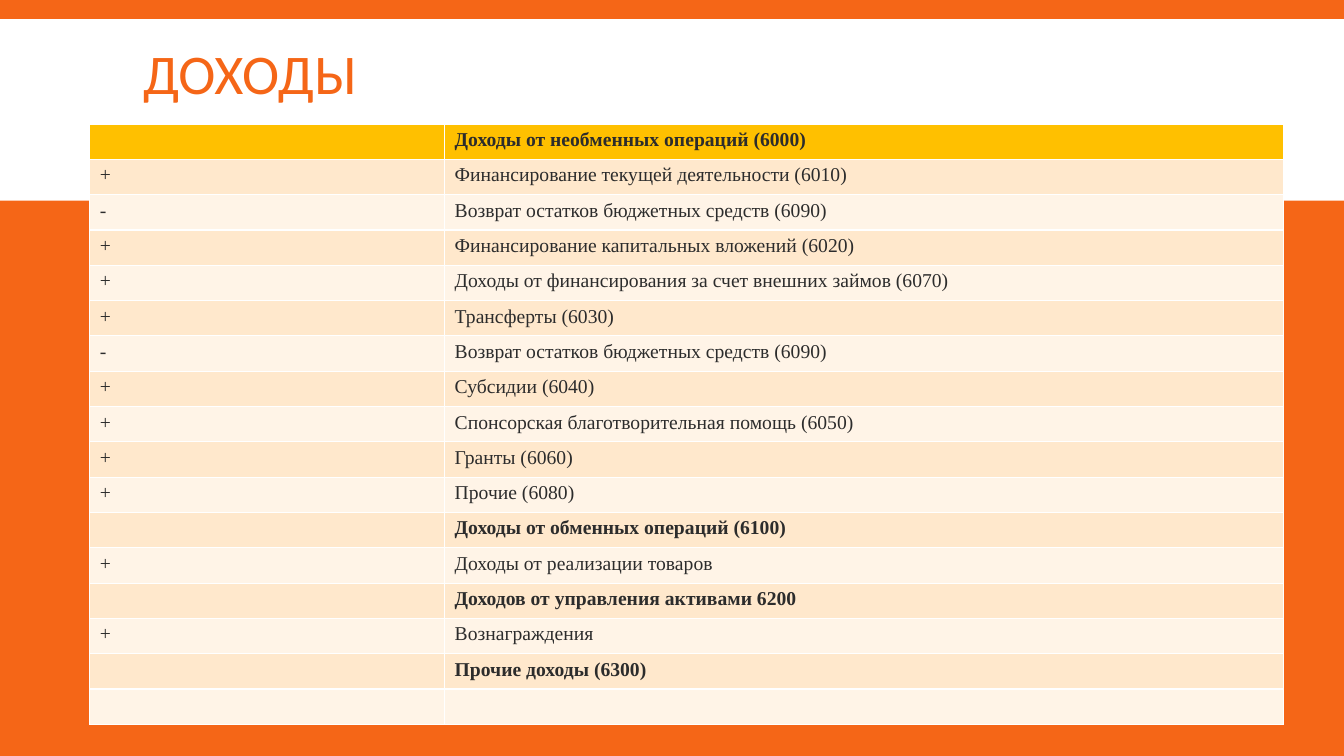
import pptx
import pptx.dml.color
import pptx.enum.shapes
import pptx.enum.text
import pptx.oxml.ns
import pptx.util
from lxml import etree
from pptx.util import Inches

COLORS = {
    "orange": "F56617",
    "white": "FFFFFF",
    "header": "FFC000",
    "dark_band": "FFE8CC",
    "light_band": "FFF4E7",
    "ink": "2C2C2C",
}

INCOME_ROWS = [
    ("", "Доходы от необменных операций (6000)"),
    ("+", "Финансирование текущей деятельности (6010)"),
    ("-", "Возврат остатков бюджетных средств (6090)"),
    ("+", "Финансирование капитальных вложений (6020)"),
    ("+", "Доходы от финансирования за счет внешних займов (6070)"),
    ("+", "Трансферты (6030)"),
    ("-", "Возврат остатков бюджетных средств (6090)"),
    ("+", "Субсидии (6040)"),
    ("+", "Спонсорская благотворительная помощь (6050)"),
    ("+", "Гранты (6060)"),
    ("+", "Прочие (6080)"),
    ("", "Доходы от обменных операций (6100)"),
    ("+", "Доходы от реализации товаров"),
    ("", "Доходов от управления активами 6200"),
    ("+", "Вознаграждения"),
    ("", "Прочие доходы (6300)"),
    ("", ""),
]


def rgb(name):
    """Return the named palette colour."""
    return pptx.dml.color.RGBColor.from_string(COLORS[name])


def paint(fill, color):
    """Give a fill one solid palette colour."""
    fill.solid()
    fill.fore_color.rgb = rgb(color)


def write(frame, text, size=14, font="Times New Roman", color="ink", bold=False, spacing=1.0):
    """Write one left-aligned paragraph, keeping its size even when empty."""
    paragraph = frame.paragraphs[0]
    paragraph.alignment = pptx.enum.text.PP_ALIGN.LEFT
    paragraph.line_spacing = spacing
    if not text:
        end = etree.SubElement(paragraph._p, pptx.oxml.ns.qn("a:endParaRPr"))
        end.set("sz", str(size * 100))
        return
    run = paragraph.add_run()
    run.text = text
    run.font.size = pptx.util.Pt(size)
    run.font.name = font
    run.font.bold = bold
    run.font.color.rgb = rgb(color)


def add_title_band(slide, left, top, width, height):
    """Lay the white band behind the slide's other parts."""
    band = slide.shapes.add_shape(
        pptx.enum.shapes.MSO_SHAPE.RECTANGLE,
        Inches(left), Inches(top), Inches(width), Inches(height))
    band.shadow.inherit = False
    paint(band.fill, "white")
    band.line.fill.background()
    slide.shapes._spTree.insert(2, band._element)


def add_title(slide, left, top, width, height):
    """Place and format the title."""
    title = slide.shapes.title
    title.left, title.top = Inches(left), Inches(top)
    title.width, title.height = Inches(width), Inches(height)
    title.text_frame.vertical_anchor = pptx.enum.text.MSO_ANCHOR.MIDDLE
    write(title.text_frame, "ДОХОДЫ", size=40, font="Calibri", color="orange", spacing=0.85)


def add_income_table(slide, left, top, width, height):
    """Build the banded income table, with unsigned rows as bold headings."""
    income = slide.shapes.add_table(
        len(INCOME_ROWS), 2, Inches(left), Inches(top), Inches(width), Inches(height)).table
    sign_width = 3.52
    income.columns[0].width = Inches(sign_width)
    income.columns[1].width = Inches(width - sign_width)
    for index, (sign, entry) in enumerate(INCOME_ROWS):
        band = "header" if index == 0 else "dark_band" if index % 2 else "light_band"
        for cell, text in zip(income.rows[index].cells, (sign, entry)):
            paint(cell.fill, band)
            write(cell.text_frame, text, bold=not sign)


def main():
    """Build and save the income slide."""
    presentation = pptx.Presentation()
    presentation.slide_width = Inches(13.33)
    presentation.slide_height = Inches(7.5)
    slide = presentation.slides.add_slide(presentation.slide_layouts[5])
    paint(slide.background.fill, "orange")
    add_title_band(slide, 0, 0.19, 13.33, 1.8)
    add_title(slide, 1.32, 0.31, 10.7, 0.92)
    add_income_table(slide, 0.89, 1.23, 11.84, 5.96)
    presentation.save("out.pptx")


if __name__ == "__main__":
    main()
